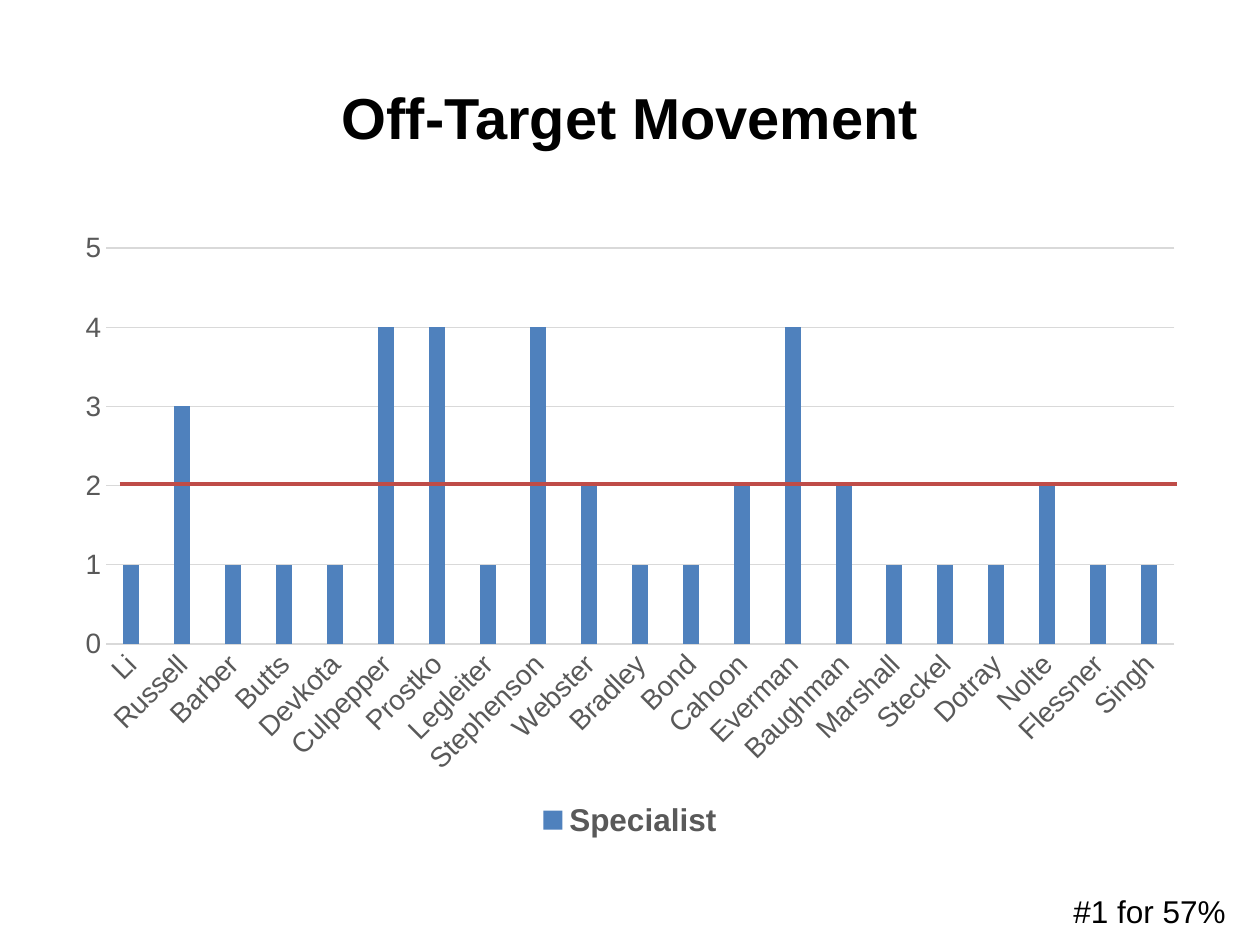
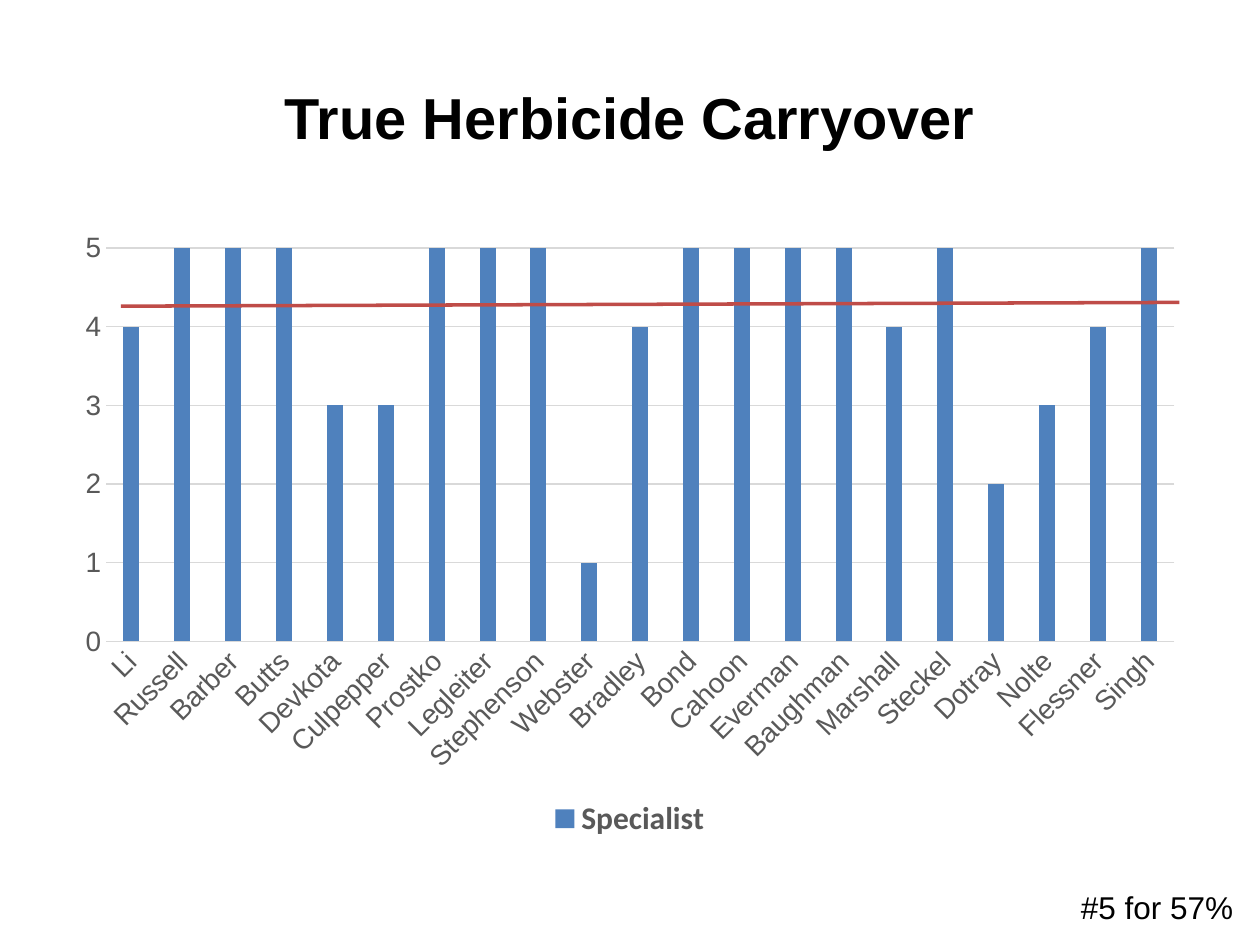
import pptx
import pptx.chart.data
import pptx.dml.color
import pptx.enum.chart
import pptx.enum.shapes
import pptx.enum.text
import pptx.oxml.ns
import pptx.util
from lxml import etree

PX = 9144  # 100 px to the inch
FONT = "Arial"
BLACK, WHITE, GREY, PALE = "000000", "FFFFFF", "595959", "D9D9D9"
BLUE, RED = "4F81BD", "BF4C48"

TITLE_BOX = (50, 30, 900, 125)
CHART_BOX = (50, 175, 900, 495)
NAMES = ["Li", "Russell", "Barber", "Butts", "Devkota", "Culpepper", "Prostko",
         "Legleiter", "Stephenson", "Webster", "Bradley", "Bond", "Cahoon",
         "Everman", "Baughman", "Marshall", "Steckel", "Dotray", "Nolte",
         "Flessner", "Singh"]

# Mean lines run from (x, y) to (x, y) inside the chart box.
SLIDES = [
    dict(title="Off-Target Movement", font="Arial",
         scores=[1, 3, 1, 1, 1, 4, 4, 1, 4, 2, 1, 1, 2, 4, 2, 1, 1, 1, 2, 1, 1],
         mean=(45, 209, 839 + 45, 209),
         note="#1 for 57%", note_box=(842, 703, 142, 40)),
    dict(title="True Herbicide Carryover", font="Calibri",
         scores=[4, 5, 5, 5, 3, 3, 5, 5, 5, 1, 4, 5, 5, 5, 5, 4, 5, 2, 3, 4, 5],
         mean=(46, 68, 886, 65),
         note="#5 for 57%", note_box=(848, 700, 142, 40)),
]


def emu(*lengths):
    return [length * PX for length in lengths]


def color(code):
    return pptx.dml.color.RGBColor.from_string(code)


def style(font, size, code=BLACK, bold=False, name=FONT):
    font.size = pptx.util.Pt(size)
    font.color.rgb = color(code)
    font.bold = bold
    font.name = name


def stroke(line, code, width):
    line.color.rgb = color(code)
    line.width = pptx.util.Pt(width)


def add_text(slide, box, text, size, bold=False, wrap=True, align="LEFT", anchor="TOP"):
    shape = slide.shapes.add_textbox(*emu(*box))
    frame = shape.text_frame
    frame.word_wrap = wrap
    frame.vertical_anchor = getattr(pptx.enum.text.MSO_ANCHOR, anchor)
    if not wrap:
        frame.auto_size = pptx.enum.text.MSO_AUTO_SIZE.SHAPE_TO_FIT_TEXT
    para = frame.paragraphs[0]
    para.alignment = getattr(pptx.enum.text.PP_ALIGN, align)
    run = para.add_run()
    run.text = text
    style(run.font, size, bold=bold)


def style_axis(axis):
    axis.major_tick_mark = axis.minor_tick_mark = pptx.enum.chart.XL_TICK_MARK.NONE
    style(axis.tick_labels.font, 16, GREY)


def add_chart(slide, box, scores, font):
    data = pptx.chart.data.CategoryChartData()
    data.categories = NAMES
    data.add_series("Specialist", scores)
    kind = pptx.enum.chart.XL_CHART_TYPE.COLUMN_CLUSTERED
    chart = slide.shapes.add_chart(kind, *emu(*box), data).chart
    style(chart.font, 10, name=font)
    chart.has_title = False

    chart.has_legend = True
    chart.legend.position = pptx.enum.chart.XL_LEGEND_POSITION.BOTTOM
    chart.legend.include_in_layout = False
    style(chart.legend.font, 18, GREY, bold=True, name=font)

    plot = chart.plots[0]
    plot.gap_width, plot.overlap = 219, -27
    plot.vary_by_categories = False
    fill = plot.series[0].format.fill
    fill.solid()
    fill.fore_color.rgb = color(BLUE)

    names = chart.category_axis
    style_axis(names)
    stroke(names.format.line, PALE, 0.75)
    body = names._element.find(".//" + pptx.oxml.ns.qn("a:bodyPr"))
    body.set("rot", "-2700000")  # 45 degrees, rising
    body.set("vert", "horz")

    values = chart.value_axis
    style_axis(values)
    values.format.line.fill.background()
    values.minimum_scale, values.maximum_scale, values.major_unit = 0, 5, 1
    values.has_major_gridlines = True
    stroke(values.major_gridlines.format.line, PALE, 0.75)


def add_mean(slide, box, ends):
    left, top = box[:2]
    x1, y1, x2, y2 = ends
    line = slide.shapes.add_connector(
        pptx.enum.shapes.MSO_CONNECTOR.STRAIGHT,
        *emu(left + x1, top + y1, left + x2, top + y2))
    stroke(line.line, RED, 2)
    etree.SubElement(line._element.spPr, pptx.oxml.ns.qn("a:effectLst"))


def add_slide(deck, title, font, scores, mean, note, note_box):
    slide = deck.slides.add_slide(deck.slide_layouts[6])
    fill = slide.background.fill
    fill.solid()
    fill.fore_color.rgb = color(WHITE)
    add_text(slide, TITLE_BOX, title, 33, bold=True, align="CENTER", anchor="MIDDLE")
    add_chart(slide, CHART_BOX, scores, font)
    add_mean(slide, CHART_BOX, mean)
    add_text(slide, note_box, note, 18, wrap=False)


def main():
    deck = pptx.Presentation()
    deck.slide_width, deck.slide_height = emu(1000, 750)
    for parts in SLIDES:
        add_slide(deck, **parts)
    deck.save("out.pptx")


if __name__ == "__main__":
    main()
